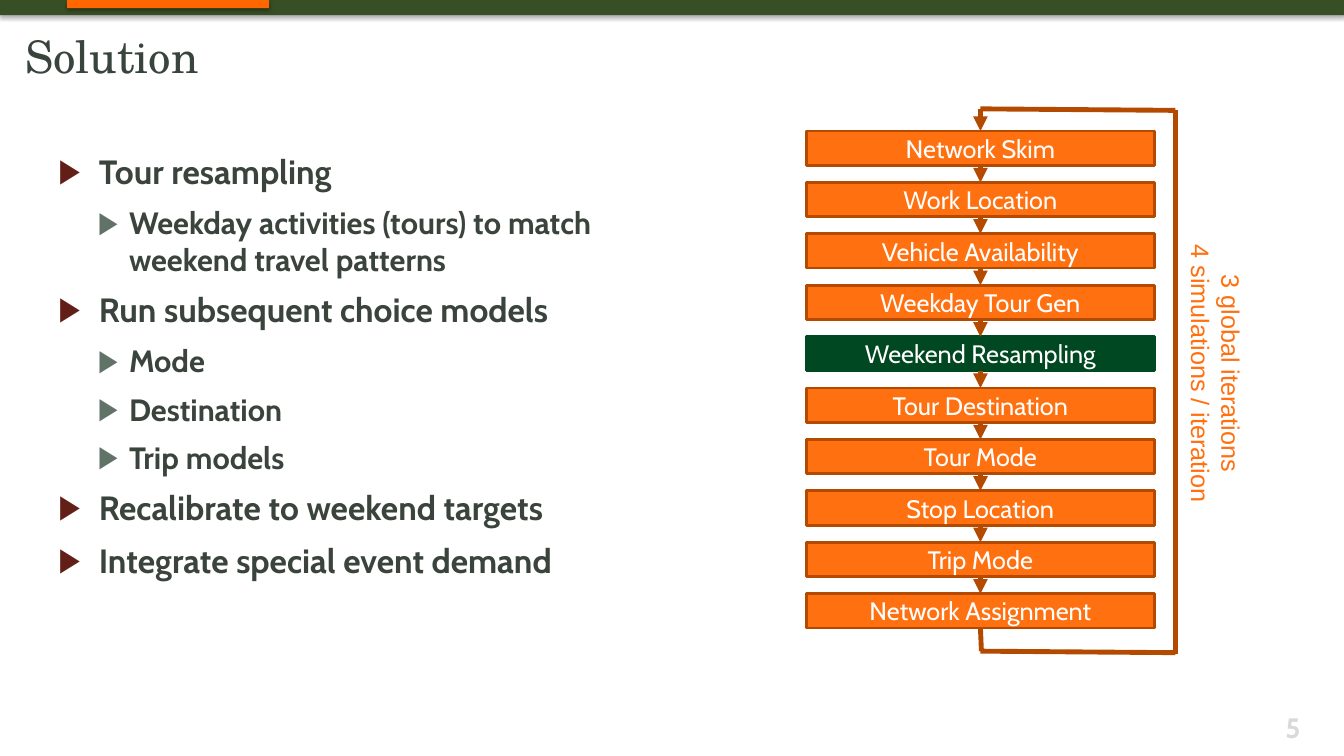
from dataclasses import dataclass
from itertools import pairwise

from lxml import etree
from pptx import Presentation
from pptx.dml.color import RGBColor
from pptx.enum.shapes import MSO_CONNECTOR, MSO_SHAPE
from pptx.enum.text import MSO_ANCHOR, PP_ALIGN
from pptx.oxml import parse_xml
from pptx.oxml.ns import nsdecls, qn
from pptx.shapes.autoshape import Shape
from pptx.slide import Slide
from pptx.text.text import TextFrame
from pptx.util import Inches, Pt

RECTANGLE = MSO_SHAPE.RECTANGLE
STRAIGHT = MSO_CONNECTOR.STRAIGHT
LEFT, CENTER, RIGHT = PP_ALIGN.LEFT, PP_ALIGN.CENTER, PP_ALIGN.RIGHT
TOP, MIDDLE = MSO_ANCHOR.TOP, MSO_ANCHOR.MIDDLE

# Grid: 40 columns by 30 rows
SLIDE_WIDTH, SLIDE_HEIGHT = Inches(13.33), Inches(7.5)
COLUMN, ROW = SLIDE_WIDTH / 40, SLIDE_HEIGHT / 30

COLORS = {
    "bar": "384F26", "tab": "FF6600", "title": "38443C", "body": "3A443C",
    "topic_bullet": "621F18", "detail_bullet": "617367", "number": "D9D9D9",
    "step": "FF7010", "step_line": "B44900", "highlight": "004821", "white": "FFFFFF",
}


@dataclass(frozen=True)
class Area:
    column: float
    row: float
    columns: float
    rows: float

    def emu(self) -> tuple[int, int, int, int]:
        return (round(self.column * COLUMN), round(self.row * ROW),
                round(self.columns * COLUMN), round(self.rows * ROW))


@dataclass(frozen=True)
class Style:
    size: float
    color: str
    font: str = "Cabin"
    bold: bool = False
    align: PP_ALIGN = LEFT


@dataclass(frozen=True)
class Level:
    style: Style
    bullet: str
    margin: float
    hanging: float
    space_after: float


@dataclass(frozen=True)
class Segment:
    start: tuple[float, float]
    end: tuple[float, float]
    arrow: bool = False


# Styles and content
TITLE = Style(32, "title", "TeX Gyre Schola")
STEP = Style(18, "white", align=CENTER)
NOTE = Style(18, "step", "Arial", align=CENTER)
NUMBER = Style(20, "number", bold=True, align=RIGHT)
TOPIC = Level(Style(24, "body", bold=True), "topic_bullet", 0.4, 0.4, 9)
DETAIL = Level(Style(22, "body", bold=True), "detail_bullet", 0.7, 0.31, 8)

OUTLINE = [
    (TOPIC, "Tour resampling"),
    (DETAIL, "Weekday activities (tours) to match weekend travel patterns"),
    (TOPIC, "Run subsequent choice models"),
    (DETAIL, "Mode"),
    (DETAIL, "Destination"),
    (DETAIL, "Trip models"),
    (TOPIC, "Recalibrate to weekend targets"),
    (TOPIC, "Integrate special event demand"),
]
HIGHLIGHTED = "Weekend Resampling"
STEPS = ["Network Skim", "Work Location", "Vehicle Availability", "Weekday Tour Gen",
         HIGHLIGHTED, "Tour Destination", "Tour Mode", "Stop Location", "Trip Mode",
         "Network Assignment"]
FIRST_STEP, STEP_PITCH = 5.2, 2.04
STEP_AREAS = [Area(24, FIRST_STEP + STEP_PITCH * index, 10.35, 1.36)
              for index in range(len(STEPS))]
FLOW_COLUMN, LOOP_COLUMN = 29.18, 34.98
LOOP_TOP, LOOP_BOTTOM = 4.32, 25.84


def color(name: str) -> RGBColor:
    return RGBColor.from_string(COLORS[name])


def add_paragraph(frame: TextFrame, text: str, style: Style):
    paragraph = frame.paragraphs[0]
    if paragraph.runs:
        paragraph = frame.add_paragraph()
    paragraph.alignment = style.align
    run = paragraph.add_run()
    run.text = text
    run.font.name, run.font.size, run.font.bold = style.font, Pt(style.size), style.bold
    run.font.color.rgb = color(style.color)
    return paragraph


def add_text_box(slide: Slide, area: Area, inset: bool, wrap: bool = True) -> Shape:
    box = slide.shapes.add_textbox(*area.emu())
    frame = box.text_frame
    frame.word_wrap, frame.vertical_anchor = wrap, TOP
    if not inset:
        frame.margin_left = frame.margin_right = frame.margin_top = frame.margin_bottom = 0
    return box


def add_rectangle(slide: Slide, area: Area, fill: str, line: str | None = None) -> Shape:
    shape = slide.shapes.add_shape(RECTANGLE, *area.emu())
    shape.shadow.inherit = False
    shape.fill.solid()
    shape.fill.fore_color.rgb = color(fill)
    if line:
        shape.line.color.rgb, shape.line.width = color(line), Pt(2)
    else:
        shape.line.fill.background()
    return shape


def add_drop_shadow(shape: Shape) -> None:
    effects = shape._element.spPr.find(qn("a:effectLst"))
    effects.append(parse_xml(
        f'<a:outerShdw {nsdecls("a")} blurRad="{Pt(3.1)}" dist="{Pt(1.8)}" dir="5400000" '
        'rotWithShape="0"><a:srgbClr val="000000"><a:alpha val="35000"/></a:srgbClr>'
        '</a:outerShdw>'))


def add_bullet(paragraph, level: Level) -> None:
    paragraph.space_after = Pt(level.space_after)
    properties = paragraph._p.get_or_add_pPr()
    properties.set("marL", str(Inches(level.margin)))
    properties.set("indent", str(-Inches(level.hanging)))
    bullet_color = etree.SubElement(properties, qn("a:buClr"))
    etree.SubElement(bullet_color, qn("a:srgbClr"), val=COLORS[level.bullet])
    etree.SubElement(properties, qn("a:buFont"), typeface="Arial")
    etree.SubElement(properties, qn("a:buChar"), char="▶")


def add_segment(slide: Slide, segment: Segment) -> None:
    ends = [round(value * unit) for point in (segment.start, segment.end)
            for value, unit in zip(point, (COLUMN, ROW))]
    connector = slide.shapes.add_connector(STRAIGHT, *ends)
    connector.line.color.rgb, connector.line.width = color("step_line"), Pt(3.5)
    if segment.arrow:
        etree.SubElement(connector.line._get_or_add_ln(), qn("a:tailEnd"), type="triangle")
    etree.SubElement(connector._element.spPr, qn("a:effectLst"))


def draw_frame(slide: Slide) -> None:
    for area, fill in ((Area(0, 0, 40, 0.6), "bar"), (Area(2, 0, 6, 0.32), "tab")):
        add_drop_shadow(add_rectangle(slide, area, fill))
    title = add_text_box(slide, Area(0.75, 1.4, 24.24, 3.8), inset=False)
    add_paragraph(title.text_frame, "Solution", TITLE).line_spacing = Pt(34)
    number = add_text_box(slide, Area(35.34, 28, 3.66, 1.4), inset=True)
    add_paragraph(number.text_frame, "5", NUMBER)


def draw_outline(slide: Slide) -> None:
    body = add_text_box(slide, Area(1.74, 6, 16.74, 21.32), inset=False)
    for level, text in OUTLINE:
        add_bullet(add_paragraph(body.text_frame, text, level.style), level)


def draw_flow(slide: Slide) -> None:
    # Model steps
    for name, area in zip(STEPS, STEP_AREAS):
        fill, line = ("highlight",) * 2 if name == HIGHLIGHTED else ("step", "step_line")
        frame = add_rectangle(slide, area, fill, line).text_frame
        frame.vertical_anchor, frame.word_wrap = MIDDLE, True
        add_paragraph(frame, name, STEP)
    # Arrows between steps
    for upper, lower in pairwise(STEP_AREAS):
        add_segment(slide, Segment((FLOW_COLUMN, upper.row + upper.rows),
                                   (FLOW_COLUMN, lower.row), arrow=True))
    # Feedback loop
    last = STEP_AREAS[-1]
    for segment in (
        Segment((FLOW_COLUMN, last.row + last.rows), (FLOW_COLUMN + 0.03, LOOP_BOTTOM)),
        Segment((FLOW_COLUMN, LOOP_BOTTOM), (LOOP_COLUMN, LOOP_BOTTOM + 0.06)),
        Segment((LOOP_COLUMN, LOOP_BOTTOM + 0.12), (LOOP_COLUMN, LOOP_TOP + 0.04)),
        Segment((FLOW_COLUMN, LOOP_TOP), (LOOP_COLUMN, LOOP_TOP + 0.06)),
        Segment((FLOW_COLUMN, LOOP_TOP), (FLOW_COLUMN, FIRST_STEP), arrow=True),
    ):
        add_segment(slide, segment)
    # Iteration note
    note = add_text_box(slide, Area(32.01, 13.4, 8.34, 2.84), inset=True, wrap=False)
    note.rotation = 90
    for text in ("3 global iterations", "4 simulations / iteration"):
        add_paragraph(note.text_frame, text, NOTE)


def main() -> None:
    presentation = Presentation()
    presentation.slide_width, presentation.slide_height = SLIDE_WIDTH, SLIDE_HEIGHT
    slide = presentation.slides.add_slide(presentation.slide_layouts[6])
    draw_frame(slide)
    draw_outline(slide)
    draw_flow(slide)
    presentation.save("out.pptx")


if __name__ == "__main__":
    main()
